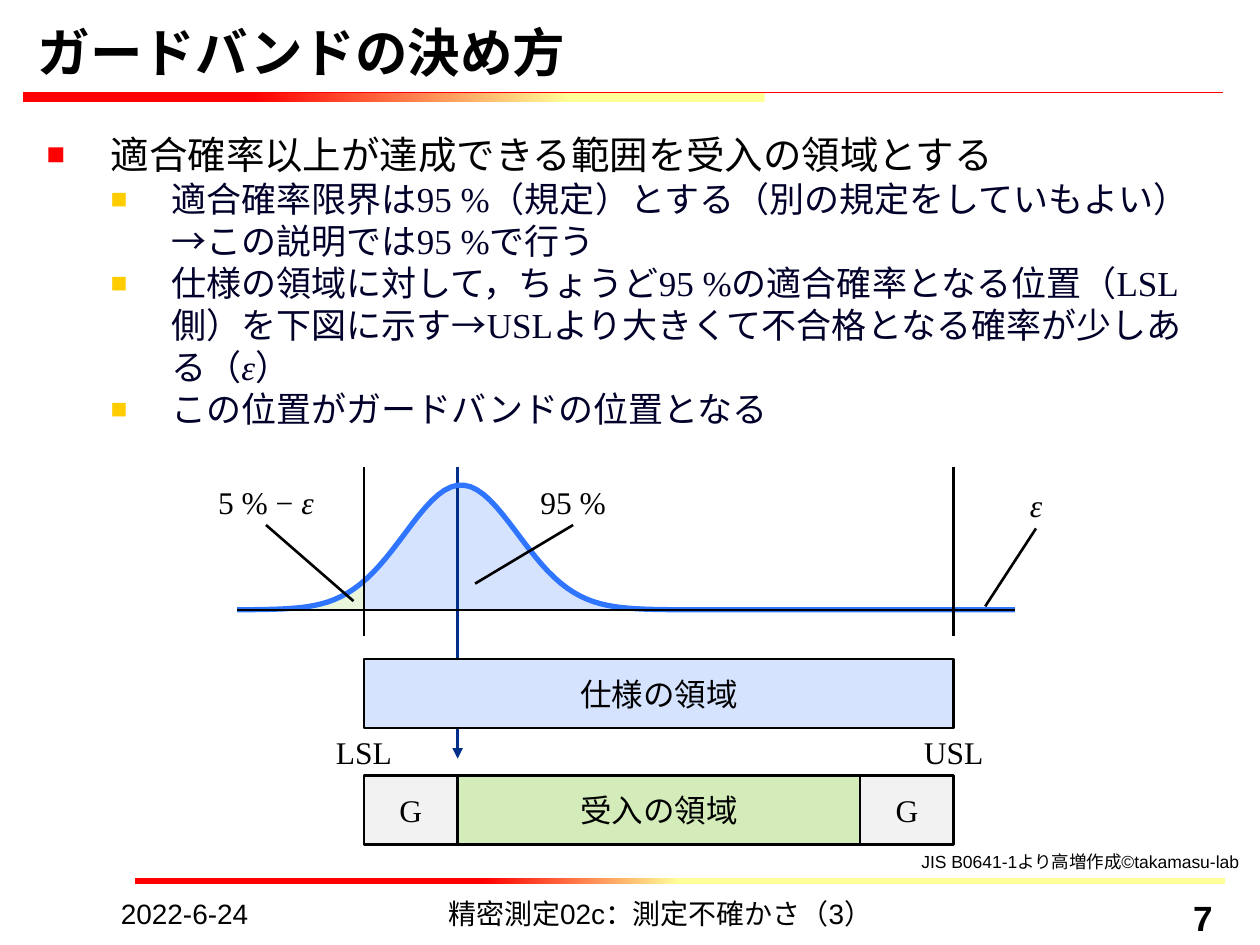
from math import exp

from lxml.etree import SubElement
from pptx import Presentation
from pptx.dml.color import RGBColor
from pptx.enum.shapes import MSO_CONNECTOR, MSO_SHAPE
from pptx.enum.text import MSO_ANCHOR, MSO_AUTO_SIZE, PP_ALIGN
from pptx.oxml.ns import qn
from pptx.util import Pt

HUES = {
    "ink": "000000", "deep": "00002A", "red": "FF0000", "gold": "FFCC00",
    "pale": "FFFF99", "sky": "D6E3FF", "mint": "E9F6DC", "green": "D3ECB9",
    "gray": "F2F2F2", "navy": "002E89", "blue": "3075FF",
}
SANS = {"name": "Arial", "size": Pt(18), "bold": False, "italic": False}
SERIF = {**SANS, "name": "Times New Roman"}
SLANT = {**SERIF, "italic": True}
POINTS = [
    ["適合確率限界は95 %（規定）とする（別の規定をしていもよい）→この説明では95 %で行う"],
    ["仕様の領域に対して，ちょうど95 %の適合確率となる位置（LSL側）を下図に示す"
     "→USLより大きくて不合格となる確率が少しある（", "ε", "）"],
    ["この位置がガードバンドの位置となる"],
]


def hue(key):
    """Return the named colour."""
    return RGBColor.from_string(HUES[key])


def add_run(para, text, style, key="ink"):
    """Append a formatted run to a paragraph."""
    run = para.add_run()
    run.text = text
    for name, value in style.items():
        setattr(run.font, name, value)
    run.font.color.rgb = hue(key)


def set_frame(frame, pad=(7.2, 3.6), wrap=True, anchor=MSO_ANCHOR.TOP):
    """Set the insets, wrapping and anchor of a text frame."""
    side, edge = map(Pt, pad)
    form = {
        "margin_left": side, "margin_right": side, "margin_top": edge,
        "margin_bottom": edge, "auto_size": MSO_AUTO_SIZE.NONE,
        "word_wrap": wrap, "vertical_anchor": anchor,
    }
    for name, value in form.items():
        setattr(frame, name, value)


def add_text(slide, box, runs, align=PP_ALIGN.LEFT, pad=(3, 3)):
    """Add a text box of one paragraph made of (text, style) runs."""
    frame = slide.shapes.add_textbox(*map(Pt, box)).text_frame
    set_frame(frame, pad)
    para = frame.paragraphs[0]
    para.alignment = align
    for text, style in runs:
        add_run(para, text, style)


def add_line(slide, ends, key="ink", width=1.5, arrow=False):
    """Draw a straight line, with an arrowhead at its end if asked."""
    line = slide.shapes.add_connector(MSO_CONNECTOR.STRAIGHT, *map(Pt, ends))
    line.line.color.rgb = hue(key)
    line.line.width = Pt(width)
    if arrow:
        SubElement(line.line._get_or_add_ln(), qn("a:tailEnd"), type="triangle")
    SubElement(line._element.spPr, qn("a:effectLst"))


def add_fade(slide, box, stops):
    """Draw a bar that fades from red at the left to pale yellow."""
    bar = slide.shapes.add_shape(MSO_SHAPE.RECTANGLE, *map(Pt, box))
    bar.shadow.inherit = False
    bar.line.fill.background()
    bar.fill.gradient()
    bar.fill.gradient_angle = 180
    for stop, place, key in zip(bar.fill.gradient_stops, stops, ("pale", "red")):
        stop.position = place
        stop.color.rgb = hue(key)


def add_zone(slide, box, text, key, style):
    """Draw an outlined bar with a centred label."""
    zone = slide.shapes.add_shape(MSO_SHAPE.RECTANGLE, *map(Pt, box))
    zone.shadow.inherit = False
    zone.fill.solid()
    zone.fill.fore_color.rgb = hue(key)
    zone.line.color.rgb = hue("ink")
    zone.line.width = Pt(1.5)
    set_frame(zone.text_frame, (3, 3), False, MSO_ANCHOR.MIDDLE)
    para = zone.text_frame.paragraphs[0]
    para.alignment = PP_ALIGN.CENTER
    add_run(para, text, style)


def add_bell(slide, box, span, fill=None):
    """Draw the normal curve over a span, or the filled area below it."""
    left, top = box[:2]
    start, end = span
    base, steps = top + 81.5, 120
    dots = []
    for i in range(steps + 1):
        x = start + (end - start) * i / steps
        rise = 71.3 * exp(-((x - 151.5) / 32.4) ** 2 / 2)
        dots.append((Pt(left + x), Pt(base - rise)))
    if fill:
        dots += [(Pt(left + end), Pt(base)), (Pt(left + start), Pt(base))]
    path = slide.shapes.build_freeform(*dots[0])
    path.add_line_segments(dots[1:], close=bool(fill))
    bell = path.convert_to_shape()
    bell.shadow.inherit = False
    if fill:
        bell.fill.solid()
        bell.fill.fore_color.rgb = hue(fill)
        bell.line.fill.background()
    else:
        bell.fill.background()
        bell.line.color.rgb = hue("blue")
        bell.line.width = Pt(3)


def add_head(slide, box):
    """Place the title and the rule below it."""
    left, top, width, height = box
    add_fade(slide, (left, top + 38, 424, 5.5), (0.26, 0.69))
    add_line(slide, (left, top + 38, left + width, top + 38), "red", 0.75)
    title = slide.shapes.title
    form = {"left": left + 1.5, "top": top, "width": width, "height": height}
    for name, value in form.items():
        setattr(title, name, Pt(value))
    set_frame(title.text_frame, anchor=MSO_ANCHOR.BOTTOM)
    para = title.text_frame.paragraphs[0]
    para.alignment = PP_ALIGN.LEFT
    add_run(para, "ガードバンドの決め方", {**SANS, "size": Pt(30), "bold": True})


def add_item(para, parts, style, key, mark, indent):
    """Fill a paragraph with a square bullet and its text."""
    margin, hang = indent
    props = para._p.get_or_add_pPr()
    props.set("marL", str(Pt(margin)))
    props.set("indent", str(Pt(-hang)))
    SubElement(SubElement(props, qn("a:buClr")), qn("a:srgbClr"), val=HUES[mark])
    SubElement(props, qn("a:buSzPct"), val="80000")
    SubElement(props, qn("a:buFont"), typeface="Arial")
    SubElement(props, qn("a:buChar"), char="■")
    for part in parts:
        add_run(para, part, {**style, "italic": part == "ε"}, key)


def add_body(slide, box):
    """Place the list of points."""
    frame = slide.shapes.add_textbox(*map(Pt, box)).text_frame
    set_frame(frame)
    add_item(frame.paragraphs[0], ["適合確率以上が達成できる範囲を受入の領域とする"],
             {**SANS, "size": Pt(22)}, "ink", "red", (36.7, 36.7))
    for parts in POINTS:
        para = frame.add_paragraph()
        para.level = 1
        add_item(para, parts, {**SERIF, "size": Pt(20)}, "deep", "gold", (71.3, 34.6))


def add_graph(slide, box):
    """Draw the curve, the limits and the zones below them."""
    left, top = box[:2]
    low, high, guard, tall = 96, 433, 53.5, 39.5
    cut = low + guard

    def at(x, y, *size):
        return (left + x, top + y, *size)

    def rule(a, b, c, d, **kind):
        add_line(slide, at(a, b) + at(c, d), **kind)

    add_bell(slide, box, (low, 255), "sky")
    add_bell(slide, box, (43.5, low), "mint")
    rule(cut, 0, cut, 166.5, key="navy", width=2, arrow=True)
    add_bell(slide, box, (23.5, 468))
    for x in (low, high):
        rule(x, 0, x, 96.5)
    rule(468, 81.5, 23.5, 81.5)
    zones = [
        (low, 109.5, high - low, "仕様の領域", "sky", SANS),
        (low, 176, guard, "G", "gray", SERIF),
        (cut, 176, high - guard - cut, "受入の領域", "green", SANS),
        (high - guard, 176, guard, "G", "gray", SERIF),
    ]
    for x, y, width, text, key, style in zones:
        add_zone(slide, at(x, y, width, tall), text, key, style)
    labels = [
        (40, 6, [("5 % − ", SERIF), ("ε", SLANT)]),
        (215.5, 6, [("95 %", SERIF)]),
        (480, 7.5, [("ε", SLANT)]),
        (low, 149, [("LSL", SERIF)]),
        (high, 149, [("USL", SERIF)]),
    ]
    for x, y, runs in labels:
        add_text(slide, at(x - 40.5, y, 81, 27), runs, PP_ALIGN.CENTER)
    for ends in ((40, 33, 90, 76.5), (215.5, 33, 159.5, 66.5), (480, 35, 451, 79.5)):
        rule(*ends)


def add_foot(slide, box):
    """Place the source line, the bar and the footer texts."""
    left, top, width = box[:3]
    add_text(slide, (523.5, top - 19, 196.5, 18),
             [("JIS B0641-1より高増作成©takamasu-lab", {**SANS, "size": Pt(10)})])
    add_fade(slide, (left + 15, top, width - 15, 3), (0.5, 0.68))
    plain = {**SANS, "size": Pt(16)}
    strong = {**SANS, "size": Pt(20), "bold": True}
    cells = [
        (0, 156, "2022-6-24", plain, PP_ALIGN.LEFT),
        (128, 374.5, "精密測定02c：測定不確かさ（3）", plain, PP_ALIGN.CENTER),
        (519, 119, "7", strong, PP_ALIGN.RIGHT),
    ]
    for x, size, text, style, align in cells:
        add_text(slide, (left + x, top + 6.5, size, 21), [(text, style)], align, (7.2, 3.6))


def main():
    """Build and save the slide."""
    deck = Presentation()
    deck.slide_width, deck.slide_height = Pt(720), Pt(540)
    slide = deck.slides.add_slide(deck.slide_layouts[5])
    add_head(slide, (13, 15, 686, 36))
    add_body(slide, (19.5, 71.5, 680.5, 425.5))
    add_graph(slide, (112, 267, 520, 216))
    add_foot(slide, (62, 502, 638, 28))
    deck.save("out.pptx")


if __name__ == "__main__":
    main()
